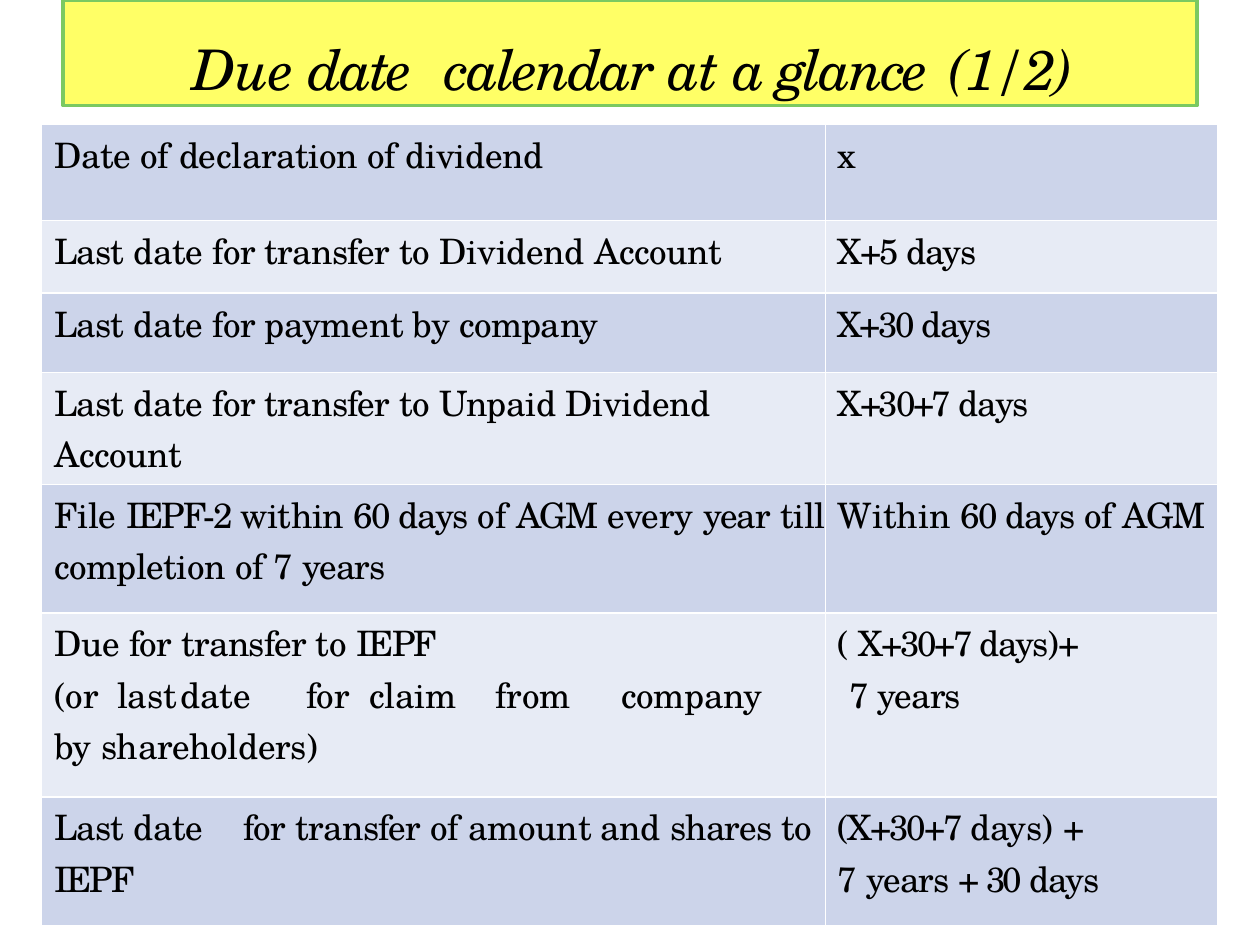
from lxml.etree import SubElement
from pptx import Presentation
from pptx.dml.color import RGBColor
from pptx.enum.shapes import MSO_SHAPE
from pptx.enum.text import MSO_ANCHOR, MSO_AUTO_SIZE, PP_ALIGN
from pptx.oxml.ns import qn
from pptx.util import Cm, Pt

FONT = "TeX Gyre Schola"
COLORS = {"text": "000000", "banner": "FFFF66", "edge": "7BC961",
          "dark": "CCD4EA", "light": "E7EBF5", "rule": "FFFFFF"}

# Letter spacing of single words, in points
TRACK = {"Last": -0.4, "transfer": -0.4, "to": -0.1, "of": -0.1,
         "date": -0.2, "for": -0.3, "X+5": -1.3, "X+30": -1.6,
         "X+30+7": -1.4, "(X+30+7": -1.2, "days": -0.5, "days)+": -0.7,
         "IEPF-2": -1.1, "IEPF": -1.1, "60": -1.1, "AGM": -0.5,
         "year": -0.5, "years": -0.5, "7": -0.4, "+": -1.8, "30": -1.7,
         "shares": -0.5, "x": 0, "Within": 0, "File": -0.1, "Due": -0.1,
         "(or\tlast\tdate\tfor\tclaim\tfrom\tcompany\tby": -0.05}
HEAD = {"Due": -0.5, "date\tcalendar": -1.3, "at": -0.8, "a": -1.9,
        "glance\t(1/2)": -1.4}

CLAIM_TABS = (1.8, 3.5, 5.46, 6.98, 9.3, 11.43, 14.83)
# Row height, then the lines of the left and right cells
ROWS = [
    (1.93, ["Date of declaration of dividend"], ["x"]),
    (1.47, ["Last date for transfer to Dividend Account"], ["X+5 days"]),
    (1.6, ["Last date for payment by company"], ["X+30 days"]),
    (2.26, ["Last date for transfer to Unpaid Dividend Account"],
     ["X+30+7 days"]),
    (2.59, ["File IEPF-2 within 60 days of AGM every year "
            "till completion of 7 years"], ["Within 60 days of AGM"]),
    (3.71, ["Due for transfer to IEPF",
            ("(or\tlast\tdate\tfor\tclaim\tfrom\tcompany\tby shareholders)",
             {"tabs": CLAIM_TABS})],
     ["( X+30+7 days)+", ("7 years", {"indent": 0.48})]),
    (2.59, [("Last date\tfor transfer of amount and shares to",
             {"tabs": (3.78,)}), "IEPF"],
     ["(X+30+7 days) +", "7 years + 30 days"]),
]


def color(name):
    return RGBColor.from_string(COLORS[name])


def write(para, text, size=20, italic=False, indent=0.25, before=0,
          tabs=(), track=TRACK):
    """Fill a paragraph word by word, each with its letter spacing."""
    props = para._p.get_or_add_pPr()
    props.set("marL", str(Cm(indent)))
    props.set("indent", "0")
    if tabs:
        stops = SubElement(props, qn("a:tabLst"))
        for pos in tabs:
            SubElement(stops, qn("a:tab"), pos=str(Cm(pos)), algn="l")
    para.alignment = PP_ALIGN.LEFT
    para.space_before = Pt(before)
    words = text.split(" ")
    for num, word in enumerate(words, 1):
        run = para.add_run()
        run.text = word if num == len(words) else word + " "
        font = run.font
        font.name, font.size, font.italic = FONT, Pt(size), italic
        font.color.rgb = color("text")
        spacing = round(track.get(word, -0.2) * 100)
        run._r.get_or_add_rPr().set("spc", str(spacing))


def inset(box, top):
    box.margin_left = box.margin_right = box.margin_bottom = 0
    box.margin_top = Cm(top)
    box.vertical_anchor = MSO_ANCHOR.TOP


def add_banner(slide):
    box = slide.shapes.add_shape(MSO_SHAPE.RECTANGLE, Cm(1.27), 0,
                                 Cm(22.86), Cm(2.13))
    box.shadow.inherit = False
    box.fill.solid()
    box.fill.fore_color.rgb = color("banner")
    box.line.color.rgb = color("edge")
    box.line.width = Pt(2.04)


def set_title(slide):
    title = slide.shapes.title
    title.left, title.top = Cm(1.32), Cm(0.66)
    title.width, title.height = Cm(22.78), Cm(1.42)
    frame = title.text_frame
    inset(frame, 0.03)
    frame.word_wrap = True
    frame.auto_size = MSO_AUTO_SIZE.SHAPE_TO_FIT_TEXT
    write(frame.paragraphs[0], "Due date\tcalendar at a glance\t(1/2)",
          size=32, italic=True, indent=2.57, tabs=(7.39, 18.06), track=HEAD)
    slide.shapes._spTree.append(title._element)  # in front of the banner


def add_rules(cell):
    """Draw thin lines on all four sides of a cell."""
    props = cell._tc.get_or_add_tcPr()
    for side in ("lnL", "lnR", "lnT", "lnB"):
        line = SubElement(props, qn("a:" + side), w=str(Pt(1)))
        fill = SubElement(line, qn("a:solidFill"))
        SubElement(fill, qn("a:srgbClr"), val=COLORS["rule"])


def fill_cell(cell, lines, shade):
    inset(cell, 0.08)
    add_rules(cell)
    cell.fill.solid()
    cell.fill.fore_color.rgb = color(shade)
    frame = cell.text_frame
    for num, line in enumerate(lines):
        para = frame.add_paragraph() if num else frame.paragraphs[0]
        text, style = (line, {}) if isinstance(line, str) else line
        write(para, text, before=0 if num else 2, **style)


def add_dates(slide):
    high = sum(row[0] for row in ROWS)
    table = slide.shapes.add_table(len(ROWS), 2, Cm(0.84), Cm(2.51),
                                   Cm(23.7), Cm(high)).table
    for col, width in zip(table.columns, (15.8, 7.9)):
        col.width = Cm(width)
    for num, (height, *cells) in enumerate(ROWS):
        table.rows[num].height = Cm(height)
        shade = "light" if num % 2 else "dark"
        for col, lines in enumerate(cells):
            fill_cell(table.cell(num, col), lines, shade)


def main():
    deck = Presentation()
    deck.slide_width, deck.slide_height = Cm(25.4), Cm(19.05)
    slide = deck.slides.add_slide(deck.slide_layouts[5])
    add_dates(slide)
    add_banner(slide)
    set_title(slide)
    deck.save("out.pptx")


if __name__ == "__main__":
    main()
